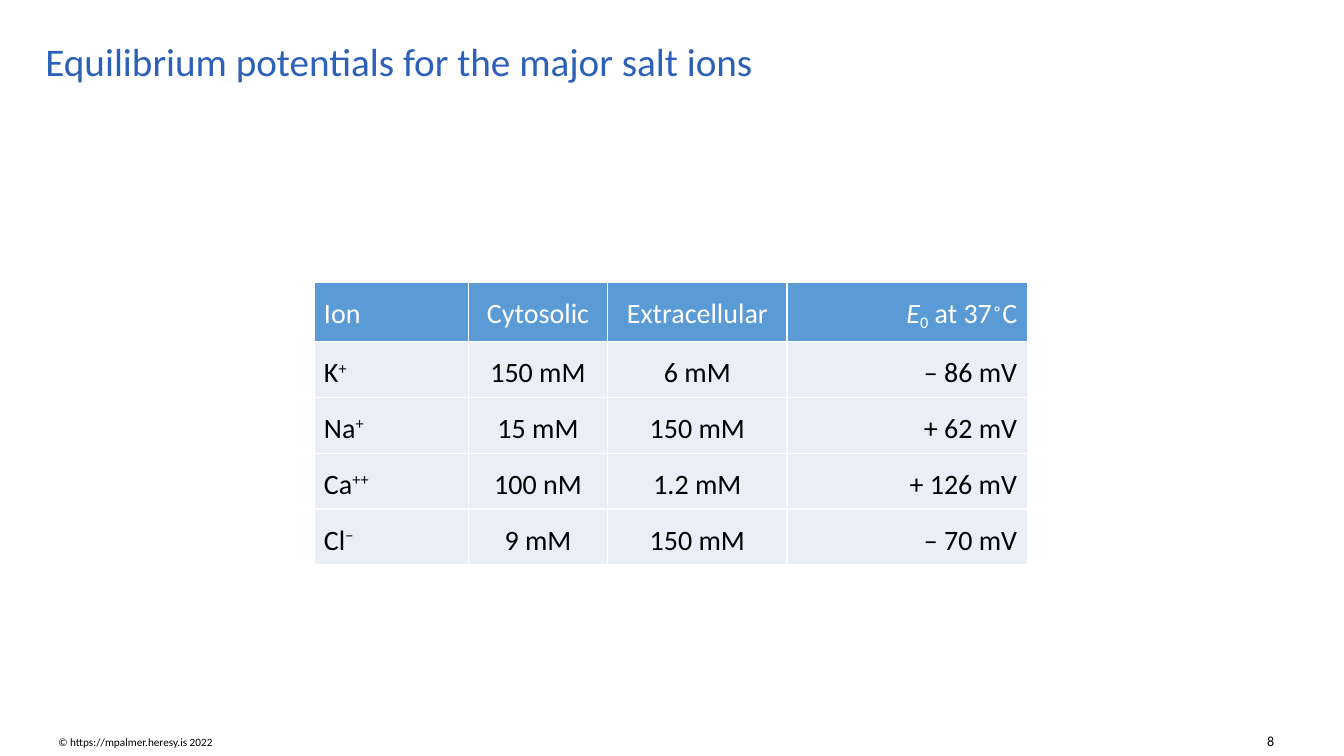
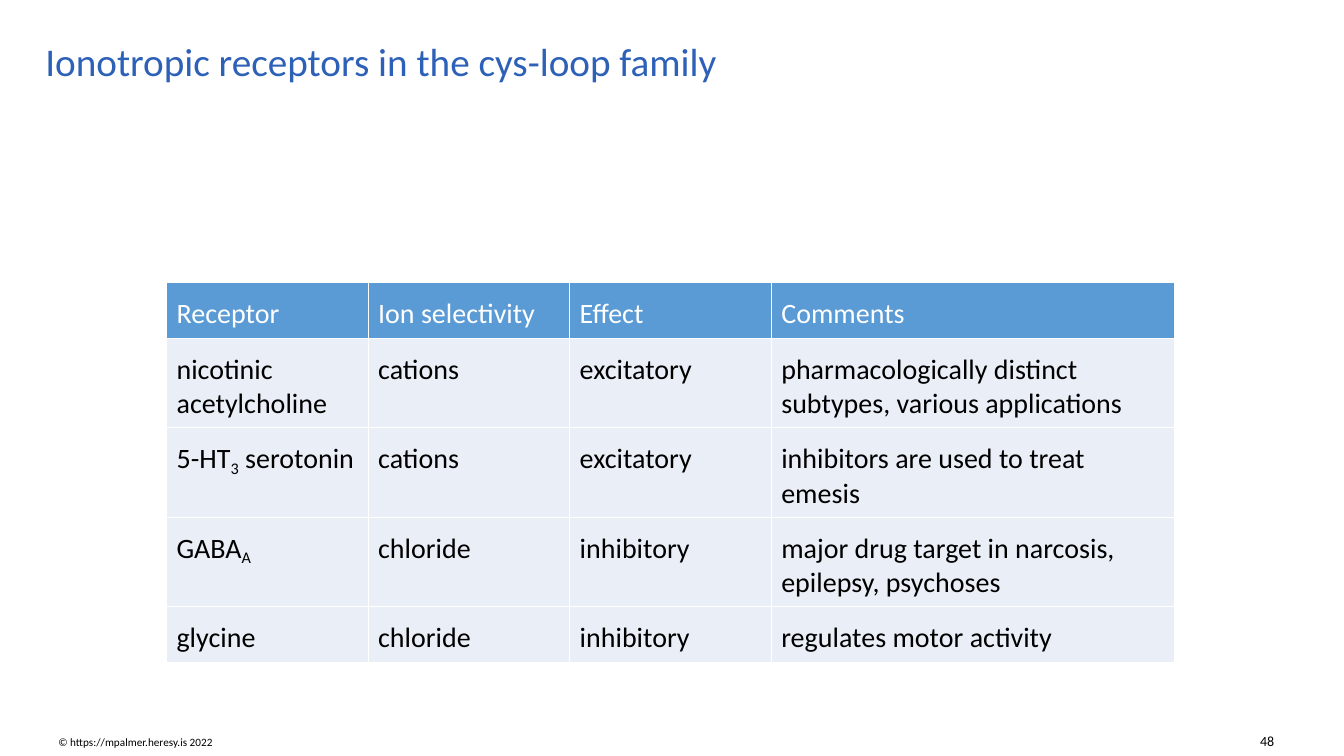
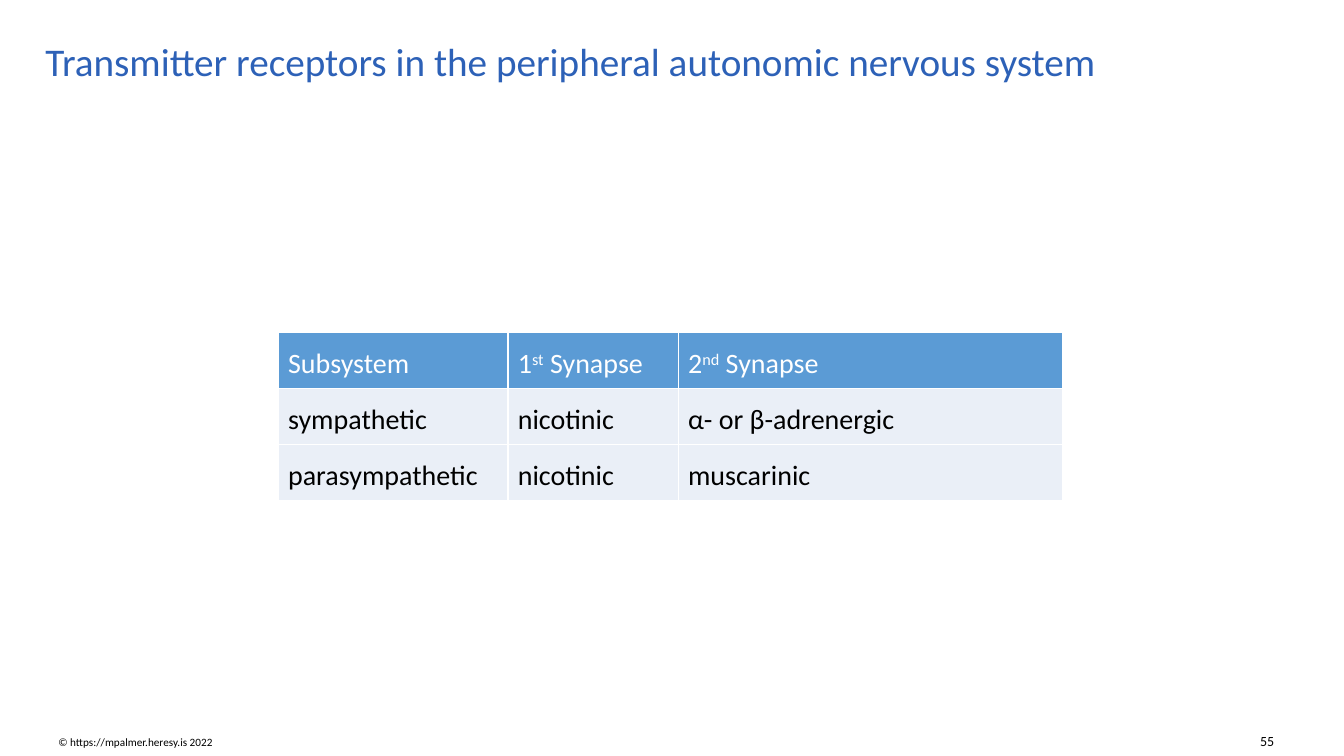
from dataclasses import dataclass
from typing import NamedTuple, Optional

from pptx import Presentation
from pptx.dml.color import RGBColor
from pptx.enum.text import MSO_ANCHOR, MSO_AUTO_SIZE, PP_ALIGN
from pptx.util import Cm, Pt

FONT = "Calibri"
TITLE_BLUE = "2D61B7"
HEADER_BLUE = "5B9BD5"
ROW_TINT = "EAEFF7"
WHITE = "FFFFFF"
BLACK = "000000"

SLIDE_WIDTH, SLIDE_HEIGHT = 33.87, 19.05
TABLE_CENTRE_X, TABLE_CENTRE_Y = 16.9, 10.29
ROW_HEIGHT = 1.27
COPYRIGHT = "© https://mpalmer.heresy.is 2022"

LEFT, CENTRE, RIGHT = PP_ALIGN.LEFT, PP_ALIGN.CENTER, PP_ALIGN.RIGHT


class Span(NamedTuple):
    """A stretch of text; baseline is a percentage shift."""
    text: str
    baseline: int = 0
    italic: bool = False


def sup(text: str) -> Span:
    return Span(text, baseline=30)


def sub(text: str) -> Span:
    return Span(text, baseline=-20)


@dataclass
class Column:
    width: float
    align: PP_ALIGN = LEFT


@dataclass
class TableSlide:
    title: str
    number: int
    columns: list[Column]
    rows: list[list]  # each cell is a string or a list of strings and spans


class Box(NamedTuple):
    left: float
    top: float
    width: float
    height: float


TITLE_BOX = Box(0.89, 0.61, 32.26, 1.98)
COPYRIGHT_BOX = Box(1.22, 18.42, 7.98, 0.58)
NUMBER_BOX = Box(30.58, 18.31, 1.78, 0.69)

SLIDES = [
    TableSlide(
        "Equilibrium potentials for the major salt ions", 8,
        [Column(3.89), Column(3.51, CENTRE), Column(4.52, CENTRE), Column(6.05, RIGHT)],
        [
            ["Ion", "Cytosolic", "Extracellular",
             [Span("E", italic=True), sub("0"), " at 37", sup("∘"), "C"]],
            [["K", sup("+")], "150 mM", "6 mM", "– 86 mV"],
            [["Na", sup("+")], "15 mM", "150 mM", "+ 62 mV"],
            [["Ca", sup("++")], "100 nM", "1.2 mM", "+ 126 mV"],
            [["Cl", sup("−")], "9 mM", "150 mM", "– 70 mV"],
        ],
    ),
    TableSlide(
        "Ionotropic receptors in the cys-loop family", 48,
        [Column(5.08), Column(5.08), Column(5.08), Column(10.16)],
        [
            ["Receptor", "Ion selectivity", "Effect", "Comments"],
            ["nicotinic acetylcholine", "cations", "excitatory",
             "pharmacologically distinct subtypes, various applications"],
            [["5-HT", sub("3"), " serotonin"], "cations", "excitatory",
             "inhibitors are used to treat emesis"],
            [["GABA", sub("A")], "chloride", "inhibitory",
             "major drug target in narcosis, epilepsy, psychoses"],
            ["glycine", "chloride", "inhibitory", "regulates motor activity"],
        ],
    ),
    TableSlide(
        "Transmitter receptors in the peripheral autonomic nervous system", 55,
        [Column(5.79), Column(4.29), Column(9.7)],
        [
            ["Subsystem", ["1", sup("st"), " Synapse"], ["2", sup("nd"), " Synapse"]],
            ["sympathetic", "nicotinic", "α- or β-adrenergic"],
            ["parasympathetic", "nicotinic", "muscarinic"],
        ],
    ),
]


def rgb(value: str) -> RGBColor:
    return RGBColor.from_string(value)


def write(paragraph, content, size: float, color: str,
          align: Optional[PP_ALIGN] = LEFT) -> None:
    """Add a string, or a list of strings and spans, run by run."""
    paragraph.alignment = align
    for part in [content] if isinstance(content, str) else content:
        span = Span(part) if isinstance(part, str) else part
        run = paragraph.add_run()
        run.text = span.text
        run.font.name = FONT
        run.font.size = Pt(size)
        run.font.bold = False
        run.font.italic = span.italic
        run.font.color.rgb = rgb(color)
        if span.baseline:
            run._r.get_or_add_rPr().set("baseline", str(span.baseline * 1000))


def place(shape, box: Box) -> None:
    shape.left, shape.top, shape.width, shape.height = map(Cm, box)


def add_title(slide, text: str) -> None:
    title = slide.shapes.title
    place(title, TITLE_BOX)
    frame = title.text_frame
    frame.vertical_anchor = MSO_ANCHOR.MIDDLE
    frame.auto_size = MSO_AUTO_SIZE.NONE
    frame.paragraphs[0].line_spacing = 0.9
    write(frame.paragraphs[0], text, 28, TITLE_BLUE)


def add_footer_text(slide, box: Box, text: str, size: float, align: PP_ALIGN) -> None:
    footer = slide.shapes.add_textbox(*map(Cm, box))
    frame = footer.text_frame
    frame.word_wrap = True
    frame.auto_size = MSO_AUTO_SIZE.SHAPE_TO_FIT_TEXT
    frame.vertical_anchor = MSO_ANCHOR.BOTTOM
    write(frame.paragraphs[0], text, size, BLACK, align)


def add_centred_table(slide, columns: list[Column], rows: list[list]) -> None:
    width = sum(column.width for column in columns)
    height = ROW_HEIGHT * len(rows)
    table = slide.shapes.add_table(
        len(rows), len(columns),
        Cm(TABLE_CENTRE_X - width / 2), Cm(TABLE_CENTRE_Y - height / 2),
        Cm(width), Cm(height)).table
    table.horz_banding = False
    for index, column in enumerate(columns):
        table.columns[index].width = Cm(column.width)
    for row_index, row in enumerate(rows):
        table.rows[row_index].height = Cm(ROW_HEIGHT)
        fill, color = (ROW_TINT, BLACK) if row_index else (HEADER_BLUE, WHITE)
        for column_index, content in enumerate(row):
            cell = table.cell(row_index, column_index)
            cell.fill.solid()
            cell.fill.fore_color.rgb = rgb(fill)
            cell.margin_left = cell.margin_right = Cm(0.25)
            cell.margin_top, cell.margin_bottom = Cm(0.36), Cm(0.2)
            write(cell.text_frame.paragraphs[0], content, 20, color,
                  columns[column_index].align)


def main() -> None:
    deck = Presentation()
    deck.slide_width, deck.slide_height = Cm(SLIDE_WIDTH), Cm(SLIDE_HEIGHT)
    title_only = deck.slide_layouts[5]
    for content in SLIDES:
        slide = deck.slides.add_slide(title_only)
        # Shared frame: title, copyright and page number
        add_title(slide, content.title)
        add_footer_text(slide, COPYRIGHT_BOX, COPYRIGHT, 8, LEFT)
        add_footer_text(slide, NUMBER_BOX, str(content.number), 10, RIGHT)
        # Table
        add_centred_table(slide, content.columns, content.rows)
    deck.save("out.pptx")


if __name__ == "__main__":
    main()
